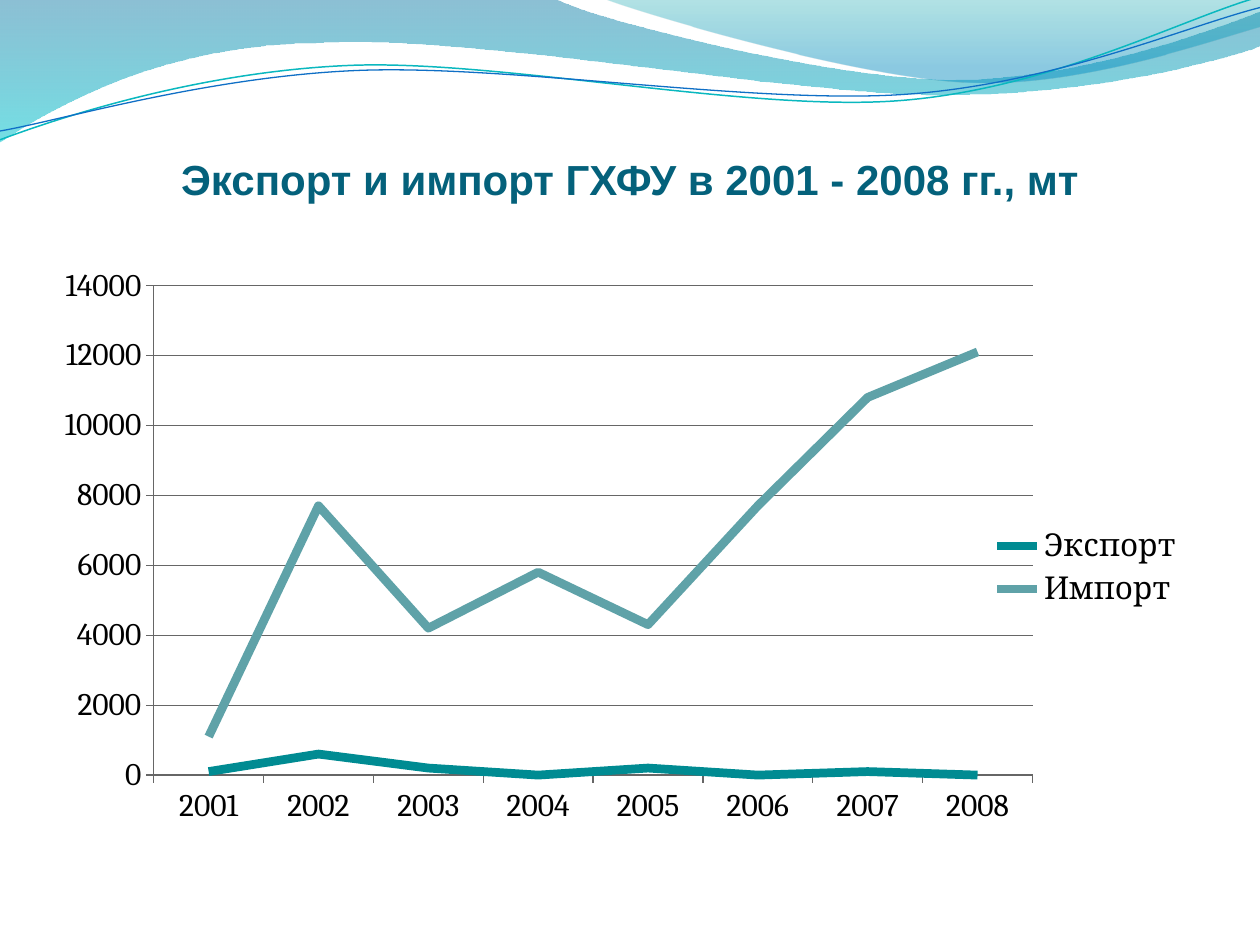
"""Build a slide with a wave header and a line chart of HCFC exports and imports."""
from copy import deepcopy

from lxml import etree
from pptx import Presentation
from pptx.chart.data import CategoryChartData
from pptx.dml.color import RGBColor
from pptx.enum.chart import XL_CHART_TYPE, XL_LEGEND_POSITION, XL_MARKER_STYLE, XL_TICK_MARK
from pptx.enum.text import MSO_ANCHOR, PP_ALIGN
from pptx.oxml.ns import qn
from pptx.util import Inches, Pt

LINE_CHART = XL_CHART_TYPE.LINE
LEGEND_RIGHT = XL_LEGEND_POSITION.RIGHT
NO_MARKER = XL_MARKER_STYLE.NONE
TICK_CROSS = XL_TICK_MARK.OUTSIDE
BOTTOM = MSO_ANCHOR.BOTTOM
CENTER = PP_ALIGN.CENTER

TITLE = "Экспорт и импорт ГХФУ в 2001 - 2008 гг., мт"
YEARS = [str(year) for year in range(2001, 2009)]
SERIES = [
    ("Экспорт", (100, 600, 200, 0, 200, 0, 100, 0), "008B92"),
    ("Импорт", (1100, 7700, 4200, 5800, 4300, 7700, 10800, 12100), "5FA2A8"),
]
TITLE_BOX = (0.5, 0.77, 9, 1.25)
CHART_BOX = (0.5, 2.12, 9, 4.8)
PLOT_LAYOUT = {"layoutTarget": "inner", "xMode": "edge", "yMode": "edge",
               "x": 0.08, "y": 0.03, "w": 0.775, "h": 0.81}
LEGEND_LAYOUT = {"xMode": "edge", "yMode": "edge", "x": 0.815, "y": 0.42}

BANDS = [
    ((0, -0.01),
     [(4.4, -0.01), (4.76, 0.17, 6.64, 0.63, 7.58, 0.63), (8.53, 0.63, 9.58, 0.26, 10, 0.09),
      (10.01, 0.36), (9.83, 0.44, 8.7, 0.76, 7.46, 0.75), (6.22, 0.75, 3.82, 0.28, 2.57, 0.34),
      (1.29, 0.35, 0.46, 0.83, -0.01, 1.13)],
     [(0, "0074A1", 45), (1, "00C6CF", 55)]),
    ((4.79, -0.01),
     [(5.09, 0.11, 6.82, 0.62, 7.69, 0.65), (8.56, 0.69, 9.61, 0.32, 10, 0.21), (10, 0)],
     [(0, "00A1A9", 30), (0.8, "008BBF", 45)]),
]
WAVES = [
    ((0, 1.11),
     [(0.48, 0.93, 1.58, 0.57, 2.77, 0.52), (3.95, 0.47, 5.93, 0.89, 7.13, 0.8),
      (8.33, 0.71, 9.38, 0.15, 9.98, -0.02)], "0AB8BF", 0.85),
    ((0, 1.04),
     [(0.47, 0.96, 1.64, 0.61, 2.83, 0.56), (4.03, 0.51, 5.97, 0.83, 7.17, 0.75),
      (8.36, 0.67, 9.41, 0.21, 10, 0.06)], "0F6FC6", 0.75),
]
UNITS_PER_INCH = 1000


def color(value):
    return RGBColor.from_string(value)


def inches(box):
    return [Inches(length) for length in box]


def units(points):
    return [round(length * UNITS_PER_INCH) for length in points]


def add_outline(slide, start, steps, closed):
    ends = [units(step[-2:]) for step in steps]
    builder = slide.shapes.build_freeform(*units(start), scale=Inches(1) / UNITS_PER_INCH)
    builder.add_line_segments(ends, close=closed)
    shape = builder.convert_to_shape()
    shape.shadow.inherit = False
    corners = [units(start), *ends]
    left, top = (min(corner[axis] for corner in corners) for axis in (0, 1))
    for segment, step in zip(shape.element.xpath(".//a:lnTo"), steps):
        if len(step) == 6:
            curve = etree.Element(qn("a:cubicBezTo"))
            lengths = units(step)
            for x, y in zip(lengths[::2], lengths[1::2]):
                etree.SubElement(curve, qn("a:pt"), x=str(x - left), y=str(y - top))
            segment.getparent().replace(segment, curve)
    return shape


def add_band(slide, start, steps, stops):
    shape = add_outline(slide, start, steps, True)
    shape.line.fill.background()
    shape.fill.gradient()
    shape.fill.gradient_angle = 270
    for stop, (position, value, _) in zip(shape.fill.gradient_stops, stops):
        stop.position = position
        stop.color.rgb = color(value)
    for element, (_, _, opacity) in zip(shape.element.xpath(".//a:gs/a:srgbClr"), stops):
        etree.SubElement(element, qn("a:alpha"), val=str(opacity * 1000))


def add_wave(slide, start, steps, value, width):
    shape = add_outline(slide, start, steps, False)
    shape.fill.background()
    style_line(shape.line, value, width)


def set_title(title):
    title.left, title.top, title.width, title.height = inches(TITLE_BOX)
    title.element.getparent().append(title.element)
    frame = title.text_frame
    frame.word_wrap = True
    frame.vertical_anchor = BOTTOM
    frame.margin_left = frame.margin_right = frame.margin_bottom = 0
    paragraph = frame.paragraphs[0]
    paragraph.alignment = CENTER
    run = paragraph.add_run()
    run.text = TITLE
    run.font.name, run.font.size, run.font.bold = "Arial", Pt(24), True
    run.font.color.rgb = color("04617B")
    paragraph.add_line_break()
    properties = run.font._element if hasattr(run.font, "_element") else run._r.rPr
    paragraph._p.xpath("a:br")[0].append(deepcopy(properties))
    ending = etree.SubElement(paragraph._p, qn("a:endParaRPr"), sz="2400", b="1")
    ending.extend(deepcopy(child) for child in properties)


def set_layout(parent, index, values):
    for old in parent.findall(qn("c:layout")):
        parent.remove(old)
    layout = etree.Element(qn("c:layout"))
    manual = etree.SubElement(layout, qn("c:manualLayout"))
    for name, value in values.items():
        etree.SubElement(manual, qn(f"c:{name}"), val=str(value))
    parent.insert(index, layout)


def style_line(line, value, width):
    line.color.rgb = color(value)
    line.width = Pt(width)


def add_line_chart(slide):
    data = CategoryChartData()
    data.categories = YEARS
    for name, values, _ in SERIES:
        data.add_series(name, values)
    chart = slide.shapes.add_chart(LINE_CHART, *inches(CHART_BOX), data).chart
    chart.has_title = False
    chart.font.name, chart.font.size = "Cambria", Pt(18)
    chart.font.color.rgb = color("000000")
    chart.has_legend = True
    chart.legend.position = LEGEND_RIGHT
    chart.legend.include_in_layout = False
    for axis in (chart.category_axis, chart.value_axis):
        axis.major_tick_mark = TICK_CROSS
        style_line(axis.format.line, "666666", 0.75)
    value_axis = chart.value_axis
    value_axis.minimum_scale, value_axis.maximum_scale, value_axis.major_unit = 0, 14000, 2000
    value_axis.has_major_gridlines = True
    style_line(value_axis.major_gridlines.format.line, "666666", 0.75)
    chart.plots[0].vary_by_categories = False
    for series, (_, _, value) in zip(chart.plots[0].series, SERIES):
        series.smooth = False
        series.marker.style = NO_MARKER
        style_line(series.format.line, value, 5)
    set_layout(chart.element.xpath("c:chart/c:plotArea")[0], 0, PLOT_LAYOUT)
    set_layout(chart.element.xpath("c:chart/c:legend")[0], 1, LEGEND_LAYOUT)


def main():
    presentation = Presentation()
    presentation.slide_width, presentation.slide_height = Inches(10), Inches(7.5)
    slide = presentation.slides.add_slide(presentation.slide_layouts[5])
    for band in BANDS:
        add_band(slide, *band)
    for wave in WAVES:
        add_wave(slide, *wave)
    set_title(slide.shapes.title)
    add_line_chart(slide)
    presentation.save("out.pptx")


if __name__ == "__main__":
    main()
